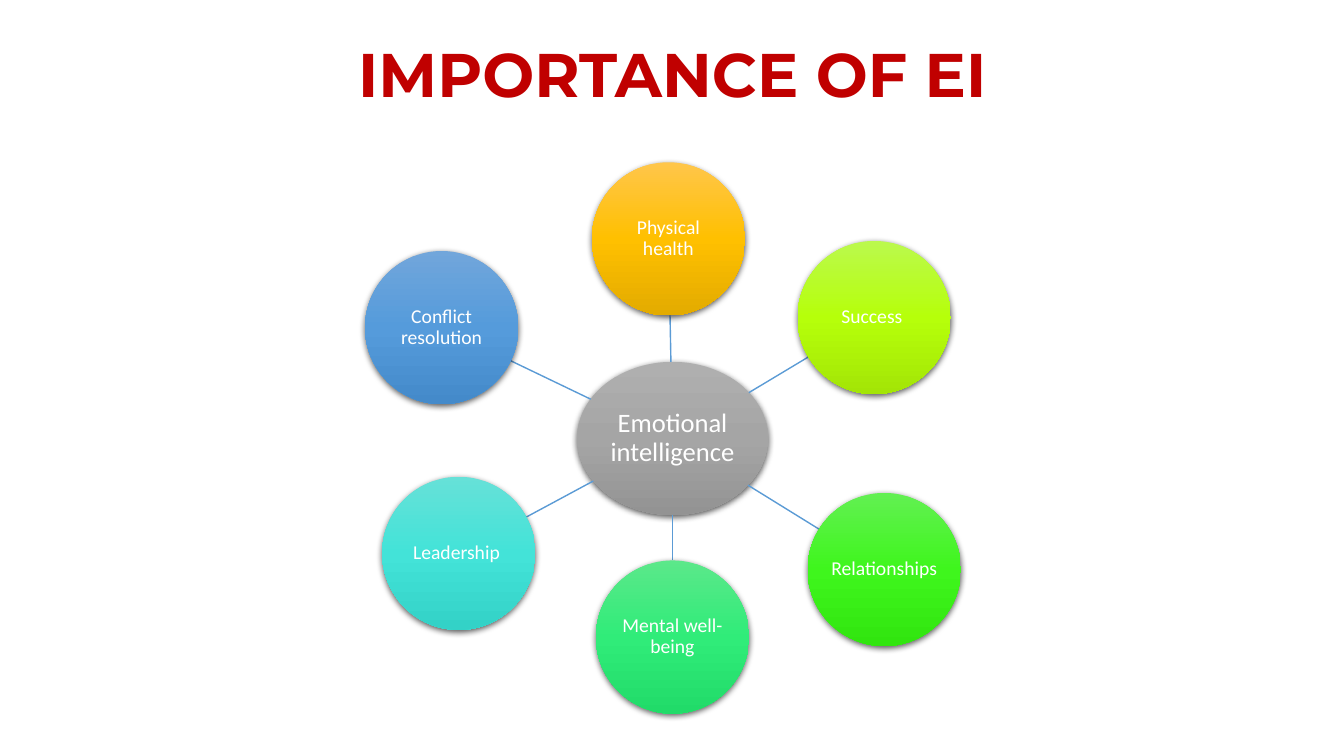
from copy import deepcopy
from math import hypot

from lxml import etree
from pptx import Presentation
from pptx.dml.color import RGBColor
from pptx.enum.shapes import MSO_CONNECTOR, MSO_SHAPE
from pptx.enum.text import MSO_ANCHOR, MSO_AUTO_SIZE, PP_ALIGN
from pptx.oxml.ns import qn
from pptx.util import Inches, Pt

HUB = ("Emotional intelligence", 6.67, 4.35, ("AFAFAF", "A5A5A5", "939393"))
BENEFITS = [
    ("Physical health", 6.63, 2.37, ("FFC64B", "FFC000", "E3AB00")),
    ("Success ", 8.67, 3.15, ("BBF94D", "B6FF0A", "A3E506")),
    ("Relationships ", 8.77, 5.65, ("62F052", "3FF61D", "31E50F")),
    ("Mental well-being", 6.67, 6.32, ("5BE88A", "30EC79", "21DB69")),
    ("Leadership ", 4.55, 5.49, ("66E1D8", "43E3D8", "33D2C7")),
    ("Conflict resolution", 4.38, 3.25, ("71A6DB", "559BDB", "448ACA")),
]
DIAMETER, HUB_WIDTH = 1.52, 1.89


def rgb(value):
    return RGBColor.from_string(value)


def edge_point(x, y, width, height, to_x, to_y):
    """Point where the ray from an ellipse's centre leaves its outline."""
    dx, dy = to_x - x, to_y - y
    t = 1 / hypot(2 * dx / width, 2 * dy / height)
    return Inches(x + t * dx), Inches(y + t * dy)


class Diagram:
    title_font = {"name": "Montserrat", "size": Pt(44), "bold": True}
    label_font = {"name": "Calibri", "bold": False}
    title_color, label_color, spoke_color = "C00000", "FFFFFF", "5B9BD5"

    def __init__(self, s):
        self.s = s

    def set_text(self, tf, text, color, **font):
        tf.word_wrap = True
        tf.auto_size = MSO_AUTO_SIZE.NONE
        tf.vertical_anchor = MSO_ANCHOR.MIDDLE
        p = tf.paragraphs[0]
        p.alignment, p.line_spacing = PP_ALIGN.CENTER, 0.9
        r = p.add_run()
        r.text = text
        for name, value in font.items():
            setattr(r.font, name, value)
        r.font.color.rgb = rgb(color)

    def title(self, text, left, top, width, height):
        sp = self.s.shapes.title
        box = {"left": left, "top": top, "width": width, "height": height}
        for name, value in box.items():
            setattr(sp, name, Inches(value))
        self.set_text(sp.text_frame, text, self.title_color, **self.title_font)

    def spoke(self, start, end):
        line = self.s.shapes.add_connector(MSO_CONNECTOR.STRAIGHT, *start, *end)
        line.line.color.rgb = rgb(self.spoke_color)
        line.line.width = Pt(1)
        etree.SubElement(line._element.spPr, qn("a:effectLst"))

    def bubble(self, text, x, y, colors, width=DIAMETER, size=14):
        sp = self.s.shapes.add_shape(
            MSO_SHAPE.OVAL, Inches(x - width / 2), Inches(y - DIAMETER / 2),
            Inches(width), Inches(DIAMETER))
        sp.line.fill.background()
        self.shade(sp, colors)
        self.drop_shadow(sp)
        tf = sp.text_frame
        for side in ("left", "right", "top", "bottom"):
            setattr(tf, f"margin_{side}", Inches(0.01))
        self.set_text(tf, text, self.label_color, size=Pt(size), **self.label_font)

    def shade(self, sp, colors):
        """Fill with three evenly spaced colours from top to bottom."""
        sp.fill.gradient()
        sp.fill.gradient_angle = 270
        stops = sp._element.spPr.find(".//" + qn("a:gsLst"))
        stops.append(deepcopy(stops[-1]))
        for i, (stop, color) in enumerate(zip(sp.fill.gradient_stops, colors)):
            stop.position = i / 2
            stop.color.rgb = rgb(color)

    def drop_shadow(self, sp):
        sp.shadow.inherit = False
        effects = sp._element.spPr.find(qn("a:effectLst"))
        shadow = etree.SubElement(
            effects, qn("a:outerShdw"), blurRad=str(Pt(4.5)), dist=str(Pt(1.5)),
            dir="5400000", algn="ctr", rotWithShape="0")
        color = etree.SubElement(shadow, qn("a:srgbClr"), val="000000")
        etree.SubElement(color, qn("a:alpha"), val="63000")


def main():
    prs = Presentation()
    prs.slide_width, prs.slide_height = Inches(13.33), Inches(7.5)
    d = Diagram(prs.slides.add_slide(prs.slide_layouts[5]))
    d.title("IMPORTANCE OF EI", 2.17, 0.3, 9, 0.94)
    d.bubble(*HUB, width=HUB_WIDTH, size=19)
    hub_x, hub_y = HUB[1:3]
    for text, x, y, colors in BENEFITS:
        d.spoke(edge_point(hub_x, hub_y, HUB_WIDTH, DIAMETER, x, y),
                edge_point(x, y, DIAMETER, DIAMETER, hub_x, hub_y))
        d.bubble(text, x, y, colors)
    prs.save("out.pptx")


if __name__ == "__main__":
    main()
